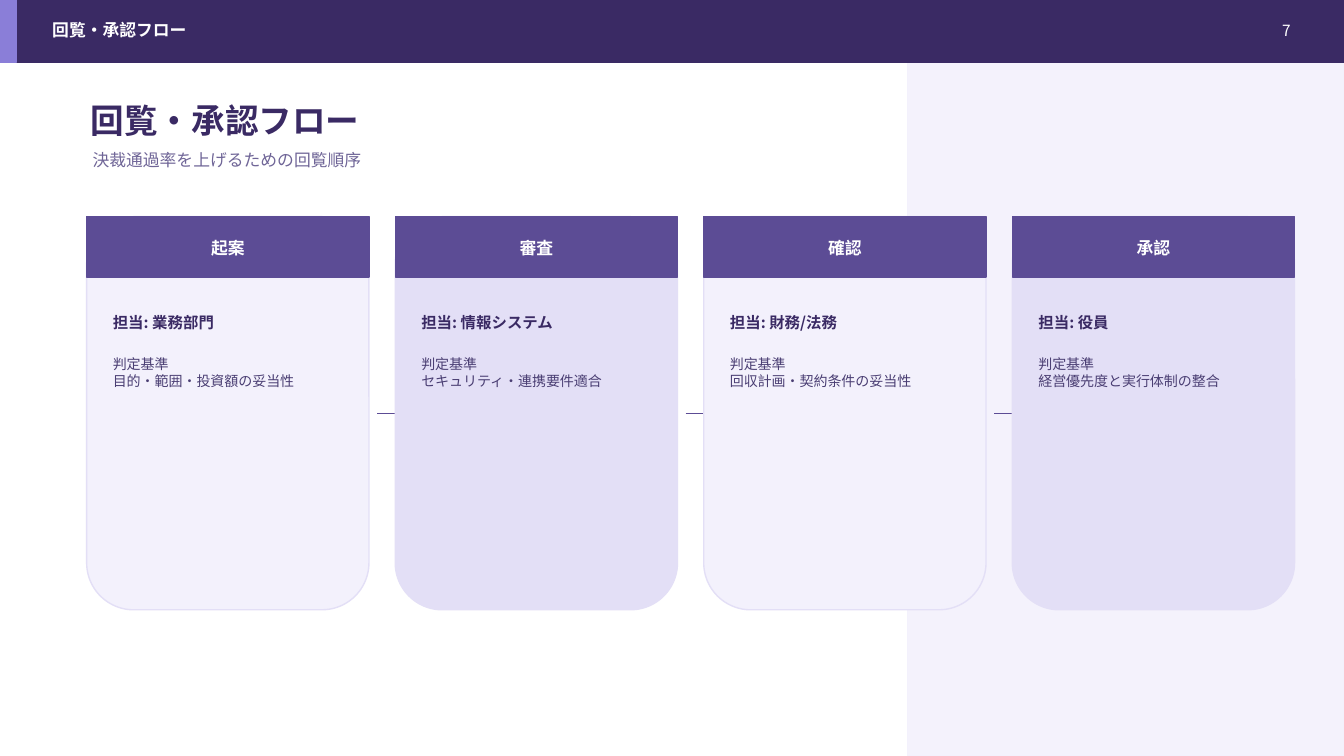
from dataclasses import dataclass

from lxml import etree
from pptx import Presentation
from pptx.dml.color import RGBColor
from pptx.enum.shapes import MSO_CONNECTOR, MSO_SHAPE
from pptx.enum.text import MSO_ANCHOR, MSO_AUTO_SIZE, PP_ALIGN
from pptx.oxml.ns import qn
from pptx.util import Pt

RECT, ROUND = MSO_SHAPE.RECTANGLE, MSO_SHAPE.ROUNDED_RECTANGLE
STRAIGHT = MSO_CONNECTOR.STRAIGHT
TOP, MIDDLE = MSO_ANCHOR.TOP, MSO_ANCHOR.MIDDLE
LEFT, CENTER, RIGHT = PP_ALIGN.LEFT, PP_ALIGN.CENTER, PP_ALIGN.RIGHT
NO_FIT = MSO_AUTO_SIZE.NONE
EMU_PER_PX = 9144


@dataclass(frozen=True)
class Theme:
    """Font, colours and type sizes of the deck."""
    font: str = "Noto Sans CJK JP"
    white: str = "FFFFFF"
    dark: str = "3A2A64"
    accent: str = "8A7ED8"
    header: str = "5C4C95"
    pale: str = "F3F1FC"
    lilac: str = "E3DFF6"
    muted: str = "6F6597"
    body: str = "4A3E73"
    title_size: int = 24
    label_size: int = 12
    owner_size: int = 11
    body_size: int = 10


THEME = Theme()
STEPS = [
    ("起案", "担当: 業務部門", "目的・範囲・投資額の妥当性"),
    ("審査", "担当: 情報システム", "セキュリティ・連携要件適合"),
    ("確認", "担当: 財務/法務", "回収計画・契約条件の妥当性"),
    ("承認", "担当: 役員", "経営優先度と実行体制の整合"),
]


def px(*values):
    """Convert pixel lengths to EMU."""
    return [v * EMU_PER_PX for v in values]


def rgb(color):
    """Return the colour object for a hex string."""
    return RGBColor.from_string(color)


def add_box(s, kind, box, fill, line=None):
    """Add a filled shape with a one-point outline."""
    sp = s.shapes.add_shape(kind, *px(*box))
    sp.shadow.inherit = False
    sp.fill.solid()
    sp.fill.fore_color.rgb = rgb(fill)
    sp.line.color.rgb = rgb(line or fill)
    sp.line.width = Pt(1)
    return sp


def write(sp, lines, size, color, bold=False, align=LEFT, anchor=MIDDLE):
    """Write one paragraph per line into a shape."""
    tf = sp.text_frame
    tf.word_wrap = True
    tf.auto_size = NO_FIT
    tf.vertical_anchor = anchor
    for i, line in enumerate(lines):
        p = tf.add_paragraph() if i else tf.paragraphs[0]
        p.alignment = align
        r = p.add_run()
        r.text = line
        r.font.size = Pt(size)
        r.font.bold = bold
        r.font.color.rgb = rgb(color)
        r.font.name = THEME.font
        ea = etree.SubElement(r.font._element, qn("a:ea"))
        ea.set("typeface", THEME.font)


def add_text(s, box, lines, size, color, **style):
    """Add a text box holding the given lines."""
    write(s.shapes.add_textbox(*px(*box)), lines, size, color, **style)


def add_side_panel(s, x, y, w, h):
    """Add the translucent panel on the right."""
    sp = add_box(s, RECT, (x, y, w, h), THEME.pale)
    color = sp.fill._xPr.find(qn("a:solidFill"))[0]
    etree.SubElement(color, qn("a:alpha")).set("val", "88000")


def add_top_bar(s, x, y, w, h, label, number):
    """Add the top bar with its label and page number."""
    add_box(s, RECT, (x, y, w, h), THEME.dark)
    add_box(s, RECT, (x, y, 16, h), THEME.accent)
    add_text(s, (x + 42, y + 17, 880, 26), [label],
             THEME.label_size, THEME.white, bold=True)
    add_text(s, (x + w - 118, y + 17, 75, 26), [number],
             THEME.owner_size, THEME.white, align=RIGHT)


def add_heading(s, x, y, w, title, subtitle):
    """Place the title placeholder and the subtitle below it."""
    sp = s.shapes.title
    sp.left, sp.top, sp.width, sp.height = px(x, y, w, 48)
    write(sp, [title], THEME.title_size, THEME.dark, bold=True)
    add_text(s, (x + 2, y + 49, w - 20, 30), [subtitle],
             THEME.label_size, THEME.muted)


def add_step(s, x, y, w, h, step, fill):
    """Add one step card with its header, owner and criterion."""
    name, owner, criterion = step
    add_box(s, ROUND, (x, y, w, h), fill, THEME.lilac)
    add_box(s, RECT, (x, y, w, 60), THEME.header)
    add_text(s, (x + 12, y + 20, w - 24, 22), [name],
             THEME.label_size, THEME.white, bold=True, align=CENTER)
    add_text(s, (x + 16, y + 90, w - 32, 30), [owner],
             THEME.owner_size, THEME.dark, bold=True)
    add_text(s, (x + 16, y + 133, w - 32, 220), ["判定基準", criterion],
             THEME.body_size, THEME.body, anchor=TOP)


def add_link(s, x, y, w):
    """Add a horizontal link line between two cards."""
    line = s.shapes.add_connector(STRAIGHT, *px(x, y, x + w, y))
    line.line.color.rgb = rgb(THEME.header)
    line.line.width = Pt(1)
    etree.SubElement(line._element.spPr, qn("a:effectLst"))


def add_flow(s, x, y, w, h, steps, gap=26):
    """Lay the step cards out in a row, linked left to right."""
    card_w = (w - gap * (len(steps) - 1)) // len(steps)
    for i, step in enumerate(steps):
        left = x + i * (card_w + gap)
        add_step(s, left, y, card_w, h, step, THEME.lilac if i % 2 else THEME.pale)
        if i < len(steps) - 1:
            add_link(s, left + card_w + 8, y + h // 2, 30)


def main():
    """Build the approval flow slide and save it."""
    prs = Presentation()
    prs.slide_width, prs.slide_height = px(1333, 750)
    s = prs.slides.add_slide(prs.slide_layouts[5])
    add_side_panel(s, 900, 55, 433, 695)
    add_top_bar(s, 0, 0, 1333, 62, "回覧・承認フロー", "7")
    add_heading(s, 80, 95, 1140, "回覧・承認フロー", "決裁通過率を上げるための回覧順序")
    add_flow(s, 86, 215, 1198, 390, STEPS)
    prs.save("out.pptx")


if __name__ == "__main__":
    main()
